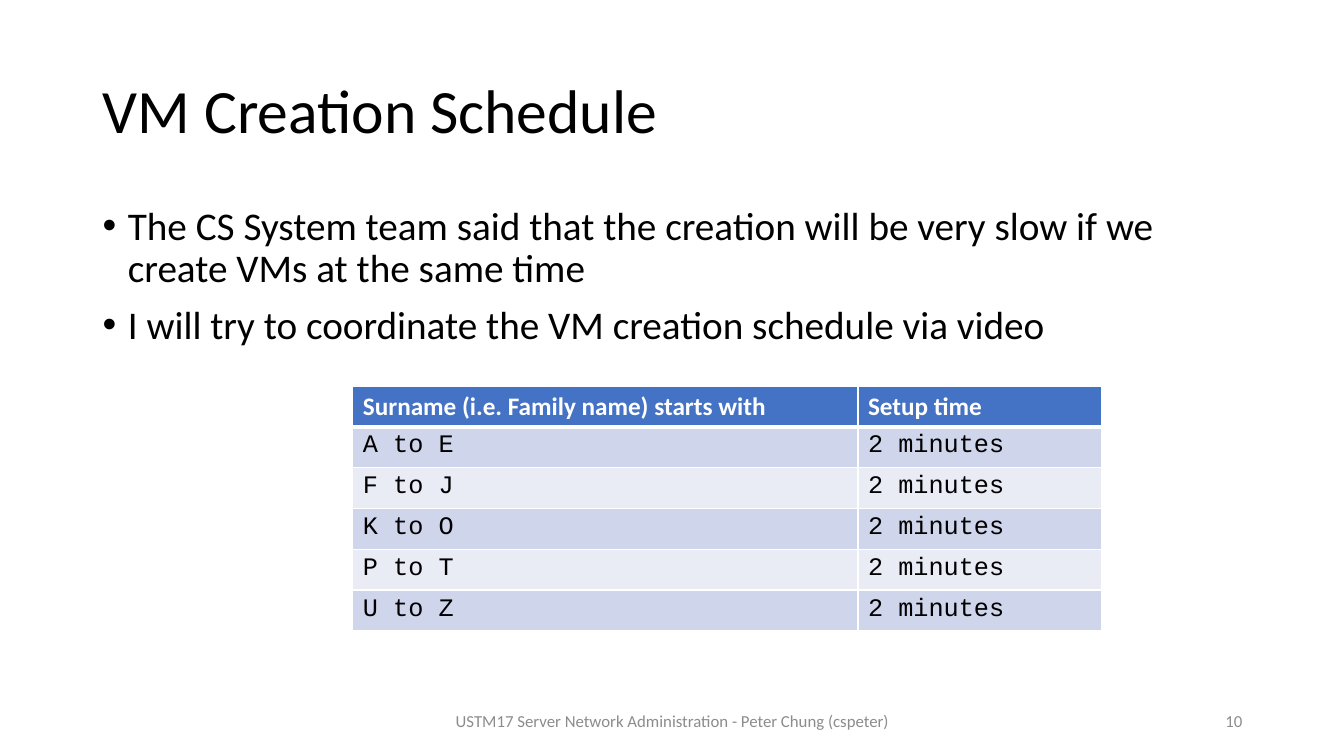
from pptx import Presentation
from pptx.dml.color import RGBColor
from pptx.enum.text import MSO_ANCHOR as Anchor, PP_ALIGN as Align
from pptx.oxml import parse_xml
from pptx.oxml.ns import nsdecls
from pptx.util import Inches, Pt

BLACK = RGBColor(0x00, 0x00, 0x00)
WHITE = RGBColor(0xFF, 0xFF, 0xFF)
GRAY = RGBColor(0x8C, 0x8C, 0x8C)
HEADER_BLUE = RGBColor(0x44, 0x72, 0xC4)
BAND_DARK = RGBColor(0xCF, 0xD5, 0xEA)
BAND_LIGHT = RGBColor(0xE9, 0xEB, 0xF5)

POINTS = [
    "The CS System team said that the creation will be very slow if we "
    "create VMs at the same time",
    "I will try to coordinate the VM creation schedule via video",
]
HEADINGS = ["Surname (i.e. Family name) starts with", "Setup time"]
SURNAME_RANGES = ["A to E", "F to J", "K to O", "P to T", "U to Z"]
SETUP_TIME = "2 minutes"
COLUMN_WIDTHS = [5.01, 2.42]
ROW_HEIGHT = 0.405


def add_span(para, text, size, color, font="Calibri", bold=False):
    span = para.add_run()
    span.text = text
    span.font.name = font
    span.font.size = Pt(size)
    span.font.bold = bold
    span.font.color.rgb = color


def add_text(slide, left, top, width, height, lines, size, color,
             align=Align.LEFT, anchor=Anchor.MIDDLE, spacing=1.0):
    """Add a wrapped text box and return its paragraphs."""
    box = slide.shapes.add_textbox(Inches(left), Inches(top),
                                   Inches(width), Inches(height))
    frame = box.text_frame
    frame.word_wrap = True
    frame.vertical_anchor = anchor
    for number, line in enumerate(lines):
        para = frame.add_paragraph() if number else frame.paragraphs[0]
        para.alignment = align
        para.line_spacing = spacing
        add_span(para, line, size, color)
    return frame.paragraphs


def add_bullet(para):
    para.space_before = Pt(10)
    props = para._p.get_or_add_pPr()
    props.set("marL", str(Inches(0.25)))
    props.set("indent", str(-Inches(0.25)))
    props.append(parse_xml(f'<a:buFont {nsdecls("a")} typeface="Arial"/>'))
    props.append(parse_xml(f'<a:buChar {nsdecls("a")} char="•"/>'))


def add_borders(cell, bottom_width, top_width):
    widths = {"lnL": 1, "lnR": 1, "lnT": top_width, "lnB": bottom_width}
    for side, width in widths.items():
        cell._tc.get_or_add_tcPr().append(parse_xml(
            f'<a:{side} {nsdecls("a")} w="{Pt(width)}"><a:solidFill>'
            f'<a:srgbClr val="{WHITE}"/></a:solidFill></a:{side}>'))


def add_schedule(slide, left, top):
    rows = [HEADINGS] + [[surnames, SETUP_TIME] for surnames in SURNAME_RANGES]
    table = slide.shapes.add_table(
        len(rows), len(HEADINGS), Inches(left), Inches(top),
        Inches(sum(COLUMN_WIDTHS)), Inches(ROW_HEIGHT * len(rows))).table
    for column, width in zip(table.columns, COLUMN_WIDTHS):
        column.width = Inches(width)
    for r, texts in enumerate(rows):
        table.rows[r].height = Inches(ROW_HEIGHT)
        for c, text in enumerate(texts):
            cell = table.cell(r, c)
            # The rule under the header is thicker than the others
            add_borders(cell, 3 if r == 0 else 1, 3 if r == 1 else 1)
            cell.fill.solid()
            para = cell.text_frame.paragraphs[0]
            if r == 0:
                cell.fill.fore_color.rgb = HEADER_BLUE
                add_span(para, text, 18, WHITE, bold=True)
            else:
                cell.fill.fore_color.rgb = BAND_DARK if r % 2 else BAND_LIGHT
                add_span(para, text, 18, BLACK, "Courier New")


def main():
    deck = Presentation()
    deck.slide_width, deck.slide_height = Inches(13.33), Inches(7.5)
    page = deck.slides.add_slide(deck.slide_layouts[6])

    # Title and bullet points
    add_text(page, 0.92, 0.4, 11.5, 1.45, ["VM Creation Schedule"], 44, BLACK,
             spacing=0.9)
    for para in add_text(page, 0.92, 2, 11.5, 4.76, POINTS, 28, BLACK,
                         anchor=Anchor.TOP, spacing=0.9):
        add_bullet(para)

    # Setup times by surname
    add_schedule(page, 3.5, 3.83)

    # Footer and page number
    add_text(page, 4.42, 6.95, 4.5, 0.4,
             ["USTM17 Server Network Administration - Peter Chung (cspeter)"],
             12, GRAY, align=Align.CENTER)
    add_text(page, 9.42, 6.95, 3, 0.4, ["10"], 12, GRAY, align=Align.RIGHT)

    deck.save("out.pptx")


if __name__ == "__main__":
    main()
